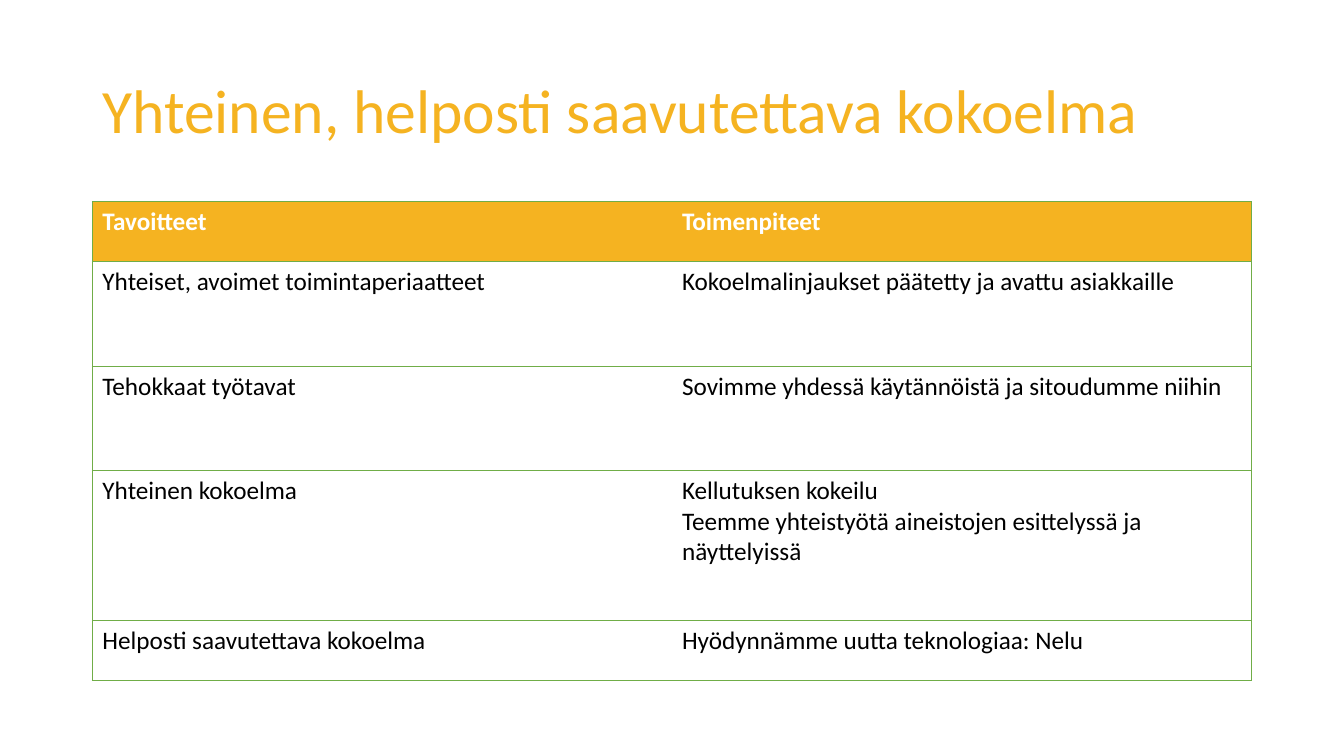
"""Build a slide with a title and a table of goals and measures."""
import dataclasses

import pptx
import pptx.dml.color
import pptx.enum.text
import pptx.oxml
import pptx.oxml.ns
import pptx.util


@dataclasses.dataclass(frozen=True)
class Theme:
    font: str = "Calibri"
    accent: str = "F5B321"
    border: str = "70AD47"
    ink: str = "000000"
    paper: str = "FFFFFF"
    title_size: int = 44
    body_size: int = 18


def px(n):
    return pptx.util.Emu(n * 9525)


def rgb(color):
    return pptx.dml.color.RGBColor.from_string(color)


def write(tf, text, *, font, size, color, bold=False, spacing=1.0):
    for i, line in enumerate(text.split("\n")):
        p = tf.add_paragraph() if i else tf.paragraphs[0]
        p.alignment = pptx.enum.text.PP_ALIGN.LEFT
        p.line_spacing = spacing
        r = p.add_run()
        r.text = line
        r.font.name = font
        r.font.size = pptx.util.Pt(size)
        r.font.bold = bold
        r.font.color.rgb = rgb(color)


class Deck:
    def __init__(self, theme, width, height):
        self.theme = theme
        self.prs = pptx.Presentation()
        self.prs.slide_width, self.prs.slide_height = px(width), px(height)
        self.s = self.prs.slides.add_slide(self.prs.slide_layouts[5])

    def title(self, text, x, y, w, h):
        sp = self.s.shapes.title
        sp.left, sp.top, sp.width, sp.height = px(x), px(y), px(w), px(h)
        tf = sp.text_frame
        tf.word_wrap = True
        tf.vertical_anchor = pptx.enum.text.MSO_ANCHOR.MIDDLE
        write(tf, text, font=self.theme.font, size=self.theme.title_size,
              color=self.theme.accent, spacing=0.9)

    def borders(self, cell, hidden):
        tcPr = cell._tc.get_or_add_tcPr()
        ns = pptx.oxml.ns.nsdecls("a")
        for side in "LRTB":
            fill = ("<a:noFill/>" if side == hidden else
                    f'<a:solidFill><a:srgbClr val="{self.theme.border}"/></a:solidFill>')
            tcPr.append(pptx.oxml.parse_xml(f'<a:ln{side} {ns} w="12700">{fill}</a:ln{side}>'))

    def table(self, rows, x, y, w, heights):
        t = self.theme
        columns = len(rows[0])
        table = self.s.shapes.add_table(
            len(rows), columns, px(x), px(y), px(w), px(sum(heights))).table
        table.horz_banding = False
        for column in table.columns:
            column.width = px(w // columns)
        for i, (texts, height) in enumerate(zip(rows, heights)):
            header = i == 0
            table.rows[i].height = px(height)
            for j, text in enumerate(texts):
                cell = table.cell(i, j)
                self.borders(cell, hidden="L" if j else "R")
                if header:
                    cell.fill.solid()
                    cell.fill.fore_color.rgb = rgb(t.accent)
                else:
                    cell.fill.background()
                write(cell.text_frame, text, font=t.font, size=t.body_size,
                      color=t.paper if header else t.ink, bold=header)


def main():
    deck = Deck(Theme(), 1280, 720)
    deck.title("Yhteinen, helposti saavutettava kokoelma", 88, 39, 1104, 139)
    deck.table([
        ("Tavoitteet", "Toimenpiteet"),
        ("Yhteiset, avoimet toimintaperiaatteet",
         "Kokoelmalinjaukset päätetty ja avattu asiakkaille"),
        ("Tehokkaat työtavat", "Sovimme yhdessä käytännöistä ja sitoudumme niihin"),
        ("Yhteinen kokoelma",
         "Kellutuksen kokeilu\nTeemme yhteistyötä aineistojen esittelyssä ja näyttelyissä"),
        ("Helposti saavutettava kokoelma", "Hyödynnämme uutta teknologiaa: Nelu"),
    ], 88, 192, 1104, (57, 100, 99, 143, 57))
    deck.prs.save("out.pptx")


if __name__ == "__main__":
    main()
